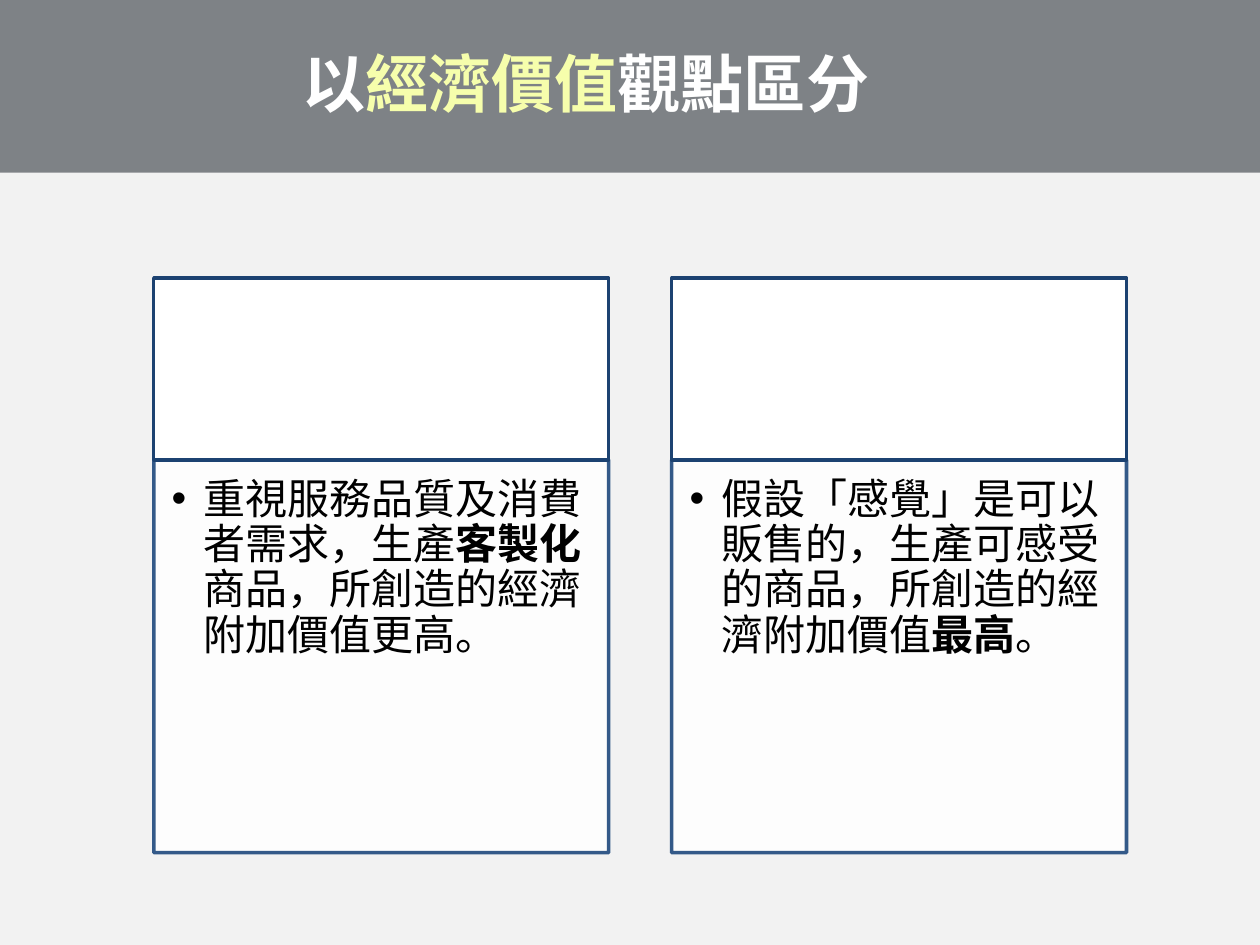
from dataclasses import dataclass

from lxml.etree import SubElement
from pptx import Presentation
from pptx.dml.color import RGBColor
from pptx.enum.shapes import MSO_SHAPE
from pptx.enum.text import MSO_ANCHOR, MSO_AUTO_SIZE, PP_ALIGN
from pptx.oxml.ns import qn
from pptx.shapes.autoshape import Shape
from pptx.slide import Slide
from pptx.text.text import TextFrame, _Paragraph
from pptx.util import Cm, Pt

FONT = "Noto Sans CJK SC"
CARD_LEFT, CARD_STEP, CARD_WIDTH = 3.1, 10.44, 9.17
CARD_TOP, HEADER_HEIGHT, BODY_HEIGHT = 5.61, 3.66, 7.92


@dataclass
class Phrase:
    words: str
    bold: bool = False
    color: str = "000000"


TITLE = [
    Phrase("以", True, "FFFFFF"),
    Phrase("經濟價值", True, "F6FEAC"),
    Phrase("觀點區分", True, "FFFFFF"),
]
CARDS = [
    [
        Phrase("重視服務品質及消費者需求，生產"),
        Phrase("客製化", True),
        Phrase("商品，所創造的經濟附加價值更高。"),
    ],
    [
        Phrase("假設「感覺」是可以販售的，生產可感受的商品，所創造的經濟附加價值"),
        Phrase("最高", True),
        Phrase("。"),
    ],
]


def rgb(color: str) -> RGBColor:
    return RGBColor.from_string(color)


def place(shape: Shape, left: float, top: float, width: float, height: float) -> None:
    shape.left, shape.top = Cm(left), Cm(top)
    shape.width, shape.height = Cm(width), Cm(height)


def paint(shape: Shape, fill: str, line: str | None = None, opacity: int = 100) -> None:
    shape.shadow.inherit = False
    shape.fill.solid()
    shape.fill.fore_color.rgb = rgb(fill)
    if line:
        shape.line.color.rgb = rgb(line)
        shape.line.width = Pt(2)
    else:
        shape.line.fill.background()
    if opacity < 100:
        for color in shape.element.spPr.findall(f".//{qn('a:srgbClr')}"):
            SubElement(color, qn("a:alpha"), val=str(opacity * 1000))


def set_frame(frame: TextFrame, anchor: MSO_ANCHOR, left: float, top: float,
              right: float, bottom: float) -> None:
    frame.word_wrap = True
    frame.auto_size = MSO_AUTO_SIZE.NONE
    frame.vertical_anchor = anchor
    frame.margin_left, frame.margin_top = Cm(left), Cm(top)
    frame.margin_right, frame.margin_bottom = Cm(right), Cm(bottom)


def write(paragraph: _Paragraph, phrases: list[Phrase], size: int) -> None:
    paragraph.line_spacing = 0.9
    paragraph.space_before = Pt(0)
    for phrase in phrases:
        run = paragraph.add_run()
        run.text = phrase.words
        run.font.name = FONT
        run.font.size = Pt(size)
        run.font.bold = phrase.bold
        run.font.color.rgb = rgb(phrase.color)
        SubElement(run.font._element, qn("a:ea"), typeface=FONT)


def set_bullet(paragraph: _Paragraph, indent: float) -> None:
    properties = paragraph._p.get_or_add_pPr()
    properties.set("marL", str(Cm(indent)))
    properties.set("indent", str(-Cm(indent)))
    SubElement(properties, qn("a:buChar"), char="•")


def draw_title(slide: Slide) -> None:
    band = slide.shapes.add_shape(MSO_SHAPE.RECTANGLE, 0, Cm(-0.08), Cm(25.4), Cm(3.56))
    paint(band, "0C141C", opacity=50)
    slide.shapes.element.insert(2, band.element)

    title = slide.shapes.title
    place(title, 1.3, 0.33, 21.03, 2.21)
    set_frame(title.text_frame, MSO_ANCHOR.BOTTOM, 0.2, 0.1, 0.2, 0.1)
    heading = title.text_frame.paragraphs[0]
    heading.alignment = PP_ALIGN.CENTER
    write(heading, TITLE, 36)


def draw_card(slide: Slide, body: Shape, left: float, phrases: list[Phrase]) -> None:
    header = slide.shapes.add_shape(MSO_SHAPE.RECTANGLE, 0, 0, 0, 0)
    place(header, left, CARD_TOP, CARD_WIDTH, HEADER_HEIGHT)
    paint(header, "FFFFFF", "1C4271")

    place(body, left, CARD_TOP + HEADER_HEIGHT, CARD_WIDTH, BODY_HEIGHT)
    paint(body, "FFFFFF", "1F497D", 90)
    set_frame(body.text_frame, MSO_ANCHOR.TOP, 0.36, 0.36, 0.48, 0.53)
    point = body.text_frame.paragraphs[0]
    write(point, phrases, 24)
    set_bullet(point, 0.64)


def main() -> None:
    """Build the slide comparing two views of economic value."""
    deck = Presentation()
    deck.slide_width, deck.slide_height = Cm(25.4), Cm(19.05)
    slide = deck.slides.add_slide(deck.slide_layouts.get_by_name("Two Content"))
    slide.background.fill.solid()
    slide.background.fill.fore_color.rgb = rgb("F2F2F2")

    draw_title(slide)
    bodies = list(slide.placeholders)[1:]
    for column, (body, phrases) in enumerate(zip(bodies, CARDS)):
        draw_card(slide, body, CARD_LEFT + column * CARD_STEP, phrases)
    deck.save("out.pptx")


if __name__ == "__main__":
    main()
